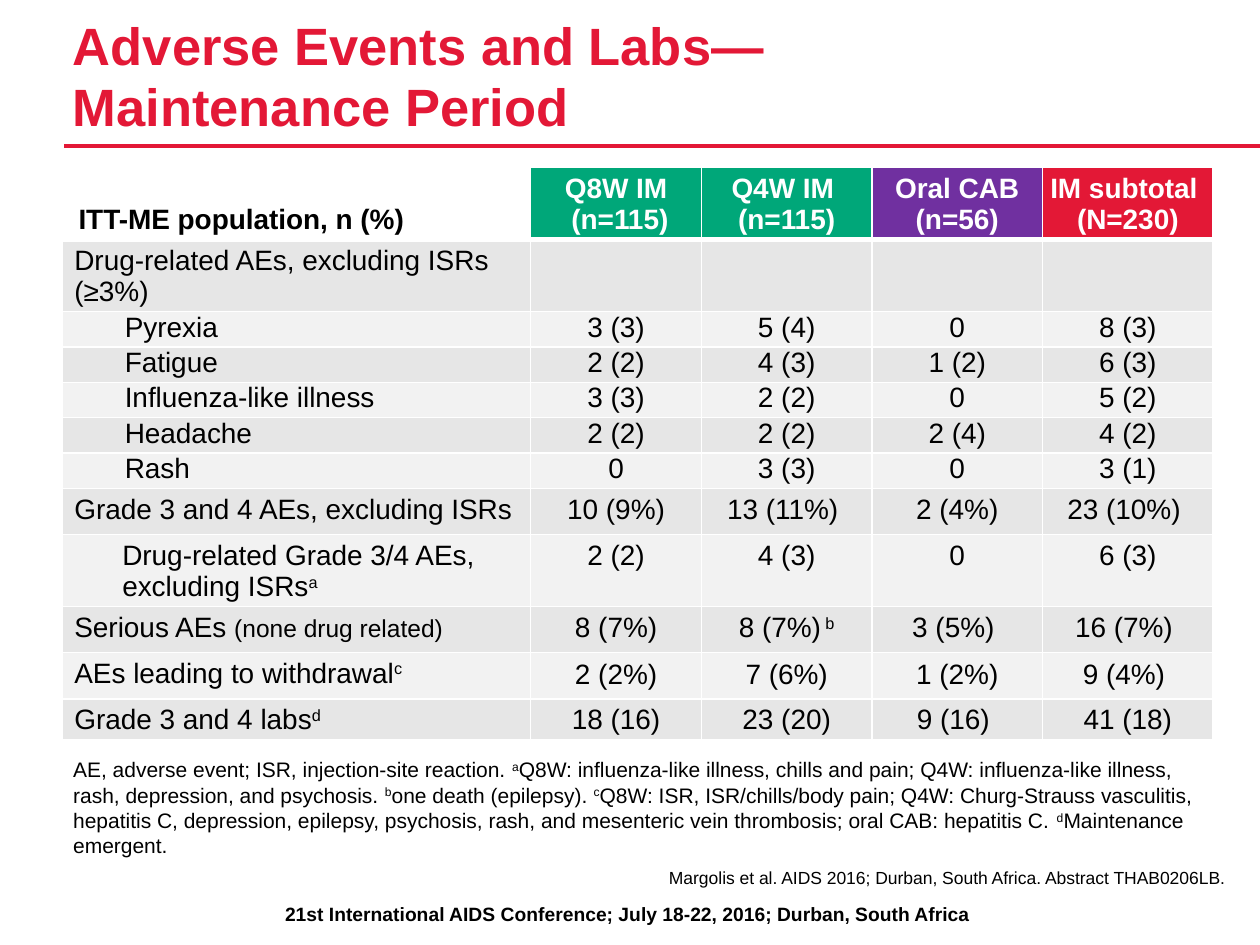
from lxml.etree import SubElement
from pptx import Presentation
from pptx.dml.color import RGBColor
from pptx.enum.shapes import MSO_CONNECTOR as Connector
from pptx.enum.text import MSO_ANCHOR as Anchor, PP_ALIGN as Align
from pptx.oxml.ns import qn
from pptx.util import Pt

FONT = "Arial"
RED, GREEN, PURPLE = "E31836", "00A779", "7030A0"
BLACK, WHITE = "000000", "FFFFFF"
BANDS = ("E6E6E6", "F2F2F2")

COLUMN_WIDTHS = (268, 97.5, 97.5, 97.5, 97.5)
HEADERS = (
    ("ITT-ME population, n (%)", None),
    ("Q8W IM\n (n=115)", GREEN),
    ("Q4W IM \n(n=115)", GREEN),
    ("Oral CAB\n(n=56)", PURPLE),
    ("IM subtotal \n(N=230)", RED),
)
HEADER_HEIGHT = 41
ROW_STYLES = {
    "group": dict(height=41, indent=7.2, top=2.9, bottom=2.2, value_top=2.9, spacing=18),
    "item": dict(height=20.2, indent=36, top=0, bottom=2.2, value_top=0, spacing=18),
    "total": dict(height=26.4, indent=7.2, top=2.9, bottom=2.2, value_top=3.6, spacing=None),
    "subitem": dict(height=41, indent=34.6, top=2.9, bottom=2.2, value_top=2.9, spacing=18),
    "labs": dict(height=23.3, indent=7.2, top=2.9, bottom=2.2, value_top=2.9, spacing=18),
}
ROWS = (
    ("group", "Drug-related AEs, excluding ISRs (≥3%)", ("", "", "", "")),
    ("item", "Pyrexia", ("3 (3)", "5 (4)", "0", "8 (3)")),
    ("item", "Fatigue", ("2 (2)", "4 (3)", "1 (2)", "6 (3)")),
    ("item", "Influenza-like illness", ("3 (3)", "2 (2)", "0", "5 (2)")),
    ("item", "Headache", ("2 (2)", "2 (2)", "2 (4)", "4 (2)")),
    ("item", "Rash", ("0", "3 (3)", "0", "3 (1)")),
    ("total", "Grade 3 and 4 AEs, excluding ISRs",
     ("10 (9%)", "13 (11%) ", "2 (4%)", "23 (10%) ")),
    ("subitem", "Drug-related Grade 3/4 AEs, excluding ISRs^a",
     ("2 (2)", "4 (3)", "0", "6 (3)")),
    ("total", "Serious AEs |(none drug related)",
     ("8 (7%)", "8 (7%)^ b", "3 (5%) ", "16 (7%) ")),
    ("total", "AEs leading to withdrawal^c", ("2 (2%)", "7 (6%)", "1 (2%)", "9 (4%) ")),
    ("labs", "Grade 3 and 4 labs^d", ("18 (16)", "23 (20)", "9 (16) ", "41 (18)")),
)
FOOTNOTE = (
    "AE, adverse event; ISR, injection-site reaction. ^a^Q8W: influenza-like illness, "
    "chills and pain; Q4W: influenza-like illness, rash, depression, and psychosis. "
    "^b^one death (epilepsy). ^c^Q8W: ISR, ISR/chills/body pain; Q4W: Churg-Strauss "
    "vasculitis, hepatitis C, depression, epilepsy, psychosis, rash, and mesenteric vein "
    "thrombosis; oral CAB: hepatitis C. ^d^Maintenance emergent."
)


def rgb(value):
    """Turn a hex string into a colour."""
    return RGBColor.from_string(value)


def add_span(para, text, size, color, bold, raised):
    """Add one formatted run, raised if it is a footnote mark."""
    span = para.add_run()
    span.text = text
    font = span.font
    font.name, font.size, font.bold = FONT, Pt(size), bold
    font.color.rgb = rgb(color)
    if raised:
        font._element.set("baseline", "30000")


def write(para, text, size, color=BLACK, bold=False, align=Align.LEFT, spacing=None):
    """Fill a paragraph; ^ toggles superscript, | starts smaller text."""
    para.alignment = align
    if spacing:
        para.line_spacing = Pt(spacing)
    for line_number, line in enumerate(text.split("\n")):
        if line_number:
            para.add_line_break()
        for step, part in enumerate(line.split("|")):
            for mark, piece in enumerate(part.split("^")):
                if piece:
                    add_span(para, piece, size - 2 * step, color, bold, mark % 2 == 1)


def set_margins(target, left, top, right, bottom):
    """Set the inner margins of a cell or text frame."""
    target.margin_left, target.margin_top = Pt(left), Pt(top)
    target.margin_right, target.margin_bottom = Pt(right), Pt(bottom)


def add_text(page, box, text, size, anchor=Anchor.TOP, **style):
    """Place a wrapped text box without margins."""
    frame = page.shapes.add_textbox(*map(Pt, box)).text_frame
    frame.word_wrap = True
    frame.vertical_anchor = anchor
    set_margins(frame, 0, 0, 0, 0)
    write(frame.paragraphs[0], text, size, **style)


def add_heading(page, box):
    """Place the title and the rule beneath it."""
    left, top, width, height = box
    add_text(page, (left + 5, top, width - 95, height),
             "Adverse Events and Labs—\nMaintenance Period", 30, Anchor.BOTTOM,
             color=RED, bold=True, spacing=35)
    rule_top = top + height + 5
    rule = page.shapes.add_connector(
        Connector.STRAIGHT, Pt(left), Pt(rule_top), Pt(left + width), Pt(rule_top))
    rule.line.color.rgb = rgb(RED)
    rule.line.width = Pt(2)
    SubElement(rule._element.spPr, qn("a:effectLst"))


def dress_cell(cell, fill, top_line=1, bottom_line=1):
    """Give a cell white borders and its fill."""
    properties = cell._tc.get_or_add_tcPr()
    for side, width in (("L", 1), ("R", 1), ("T", top_line), ("B", bottom_line)):
        border = SubElement(properties, qn(f"a:ln{side}"), w=str(Pt(width)))
        SubElement(SubElement(border, qn("a:solidFill")), qn("a:srgbClr"), val=WHITE)
    if fill:
        cell.fill.solid()
        cell.fill.fore_color.rgb = rgb(fill)
    else:
        cell.fill.background()


def fill_header(table):
    """Write the column headings."""
    table.rows[0].height = Pt(HEADER_HEIGHT)
    for column, (text, fill) in enumerate(HEADERS):
        cell = table.cell(0, column)
        dress_cell(cell, fill, bottom_line=3)
        cell.vertical_anchor = Anchor.BOTTOM
        set_margins(cell, 0.7 if fill else 9.6, 2.9, 0.7, 2.2)
        write(cell.text_frame.paragraphs[0], text, 16, WHITE if fill else BLACK, True,
              Align.CENTER if fill else Align.LEFT, 18)


def fill_row(table, number, kind, label, values):
    """Write one row of the table in the style of its kind."""
    style = ROW_STYLES[kind]
    table.rows[number].height = Pt(style["height"])
    for column, text in enumerate((label, *values)):
        cell = table.cell(number, column)
        dress_cell(cell, BANDS[(number - 1) % 2], top_line=3 if number == 1 else 1)
        para = cell.text_frame.paragraphs[0]
        if column:
            set_margins(cell, 5, style["value_top"], 5, style["bottom"])
            write(para, text, 16, align=Align.CENTER, spacing=style["spacing"])
        else:
            set_margins(cell, style["indent"], style["top"], 7.2, style["bottom"])
            write(para, text, 16, spacing=18)


def add_events_table(page, box):
    """Place the table of adverse events."""
    table = page.shapes.add_table(len(ROWS) + 1, len(HEADERS), *map(Pt, box)).table
    table.first_row = table.horz_banding = False
    for column, width in zip(table.columns, COLUMN_WIDTHS):
        column.width = Pt(width)
    fill_header(table)
    for number, row in enumerate(ROWS, 1):
        fill_row(table, number, *row)


def add_notes_area(page, box):
    """Place the footnotes, the citation and the conference line."""
    left, top, width, height = box
    add_text(page, (left, top, width, 64), FOOTNOTE, 12, Anchor.BOTTOM)
    add_text(page, (left, top + 69, width, 14.5),
             "Margolis et al. AIDS 2016; Durban, South Africa. Abstract THAB0206LB.", 10,
             align=Align.RIGHT)
    add_text(page, (left - 37.5, top + height - 17, width + 51, 17),
             "21st International AIDS Conference; July 18-22, 2016; Durban, South Africa", 11,
             bold=True, align=Align.CENTER)


def main():
    """Build the slide and save it."""
    deck = Presentation()
    deck.slide_width, deck.slide_height = Pt(720), Pt(540)
    page = deck.slides.add_slide(deck.slide_layouts[6])
    add_heading(page, (36.7, 12.2, 683.3, 66.3))
    add_events_table(page, (35.3, 95.8, 658, 326))
    add_notes_area(page, (41.8, 426.2, 658, 106.3))
    deck.save("out.pptx")


if __name__ == "__main__":
    main()
